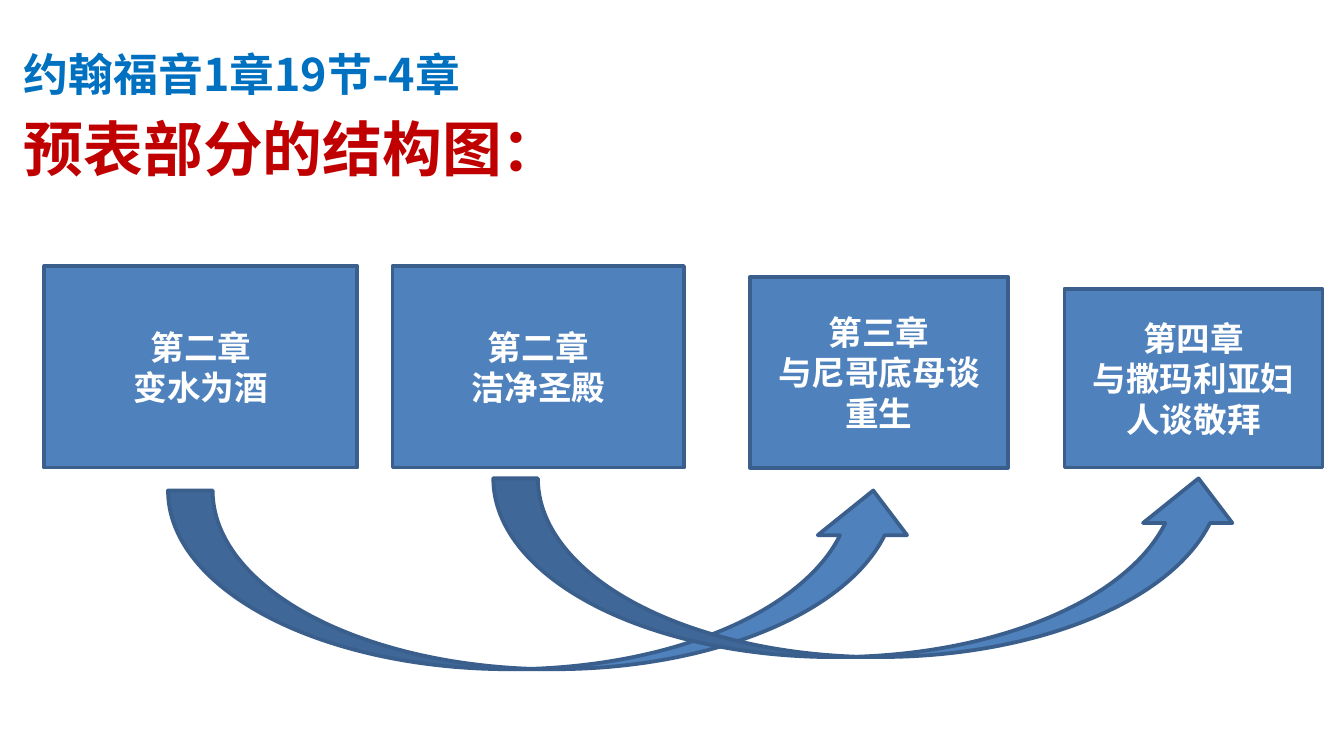
from pptx import Presentation
from pptx.dml.color import RGBColor
from pptx.enum import shapes, text
from pptx.util import Inches, Pt

BLUE = RGBColor(0x4F, 0x81, 0xBD)
EDGE = RGBColor(0x3A, 0x5F, 0x8C)
WHITE = RGBColor(0xFF, 0xFF, 0xFF)
TITLE_BLUE = RGBColor(0x00, 0x70, 0xC0)
TITLE_RED = RGBColor(0xC0, 0x00, 0x00)

# Heading: text, size, font, colour
HEADING = [
    ("约翰福音1章19节-4章", 24, "Noto Sans CJK SC", TITLE_BLUE),
    ("预表部分的结构图：", 32, "Calibri", TITLE_RED),
]

# Chapters: left, width, height, lines; all stand on one baseline
BASELINE = 3.48
CHAPTERS = [
    (0.33, 2.33, 1.5, ("第二章", "变水为酒")),
    (2.92, 2.17, 1.5, ("第二章", "洁净圣殿")),
    (5.58, 1.92, 1.42, ("第三章", "与尼哥底母谈重生")),
    (7.92, 1.92, 1.33, ("第四章", "与撒玛利亚妇人谈敬拜")),
]

# Arrows linking each sign to its conversation: left, top
ARROWS = [(1.25, 3.65), (3.67, 3.56)]
ARROW_W, ARROW_H = 5.58, 1.33

# A 16:9 slide
prs = Presentation()
prs.slide_width, prs.slide_height = Inches(10), Inches(10 * 9 / 16)
s = prs.slides.add_slide(prs.slide_layouts[6])


def write(tf, lines, align, gap=0):
    """Put one bold paragraph per (text, size, font, colour) in the frame."""
    tf.word_wrap = True
    for i, (line, size, font, color) in enumerate(lines):
        p = tf.add_paragraph() if i else tf.paragraphs[0]
        p.text = line
        p.alignment = align
        p.space_before = Pt(gap if i else 0)
        p.font.size, p.font.name, p.font.bold = Pt(size), font, True
        p.font.color.rgb = color


def add_block(kind, left, top, width, height):
    sp = s.shapes.add_shape(kind, Inches(left), Inches(top),
                            Inches(width), Inches(height))
    sp.shadow.inherit = False
    sp.fill.solid()
    sp.fill.fore_color.rgb = BLUE
    sp.line.color.rgb = EDGE
    sp.line.width = Pt(2)
    return sp


# Heading
box = s.shapes.add_textbox(Inches(0.08), Inches(0.3), Inches(9.83), Inches(1.25))
write(box.text_frame, HEADING, text.PP_ALIGN.LEFT, gap=6)

# Chapter boxes
for left, width, height, lines in CHAPTERS:
    sp = add_block(shapes.MSO_SHAPE.RECTANGLE, left, BASELINE - height, width, height)
    sp.text_frame.vertical_anchor = text.MSO_ANCHOR.MIDDLE
    write(sp.text_frame, [(line, 18, "Calibri", WHITE) for line in lines],
          text.PP_ALIGN.CENTER)

# Curved arrows
for left, top in ARROWS:
    add_block(shapes.MSO_SHAPE.CURVED_UP_ARROW, left, top, ARROW_W, ARROW_H)

prs.save("out.pptx")
